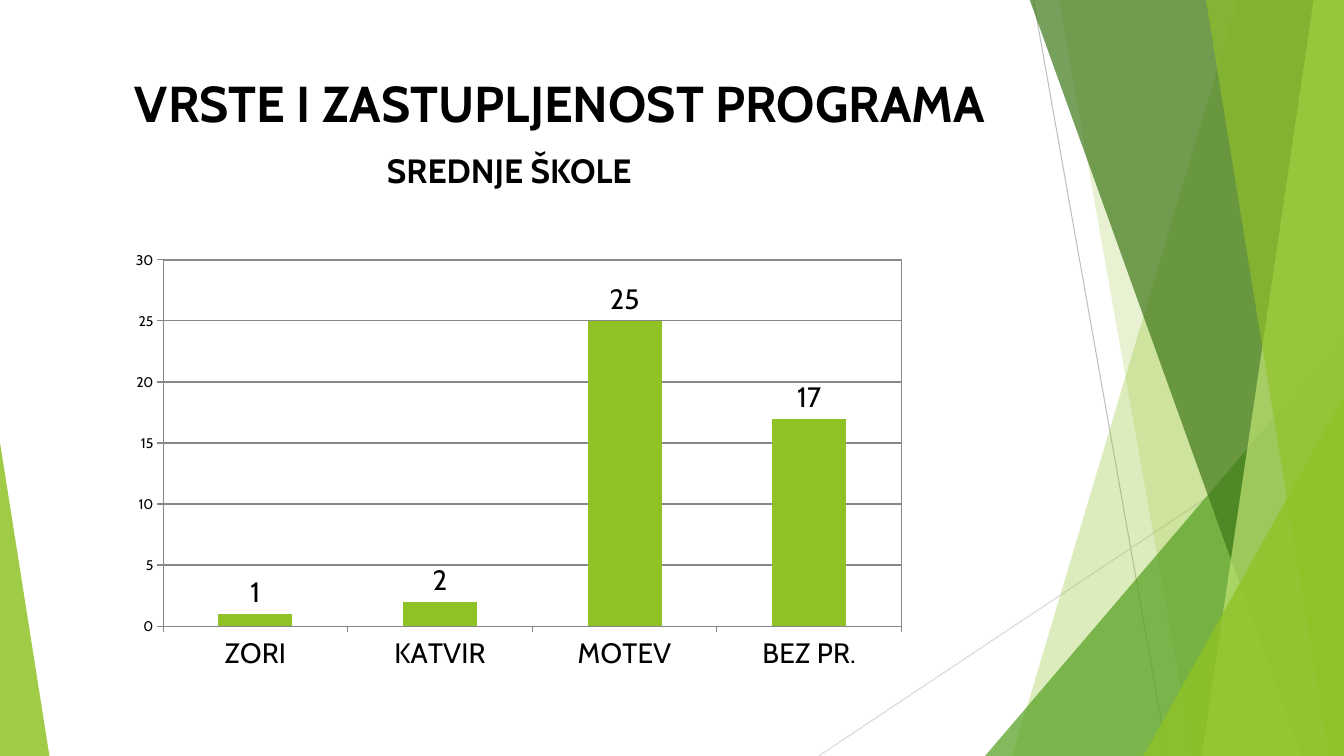
import pptx
import pptx.util
import pptx.dml.color
import pptx.chart.data
import pptx.enum.chart
import pptx.enum.shapes
import pptx.enum.text
import pptx.oxml
import pptx.oxml.ns

FONT = "Cabin"
GREEN = "90C226"
AXIS_GRAY = "878787"
WIDTH, HEIGHT, TOP = 13.33, 7.5, -0.01

HEADING = [
    ("VRSTE I ZASTUPLJENOST PROGRAMA", 36, 0.5, 0),
    ("SREDNJE ŠKOLE", 24, 3.0, 12),
]
PROGRAMS = {"ZORI": 1, "KATVIR": 2, "MOTEV": 25, "BEZ PR.": 17}

THIN_LINES = [
    (10.25, 0, 11.58, HEIGHT, "BFBFBF"),
    (WIDTH, 4.03, 8.12, HEIGHT, "D9D9D9"),
]
FACETS = [
    ("band", (12.28, 10.04), GREEN, 30),
    ("band", (10.5, 11.83), GREEN, 20),
    ("triangle", (9.77, 3.33, 3.56, 1), "54A021", 72),
    ("band", (10.21, 12.91), "3F7819", 70),
    ("band", (13.03, 11.92), "C0E474", 70),
    ("band", (11.96, 13.18), GREEN, 65),
    ("triangle", (11.34, 3.93, 1.99, 1), GREEN, 80),
    ("triangle", (0, 4.39, 0.49, 0), GREEN, 85),
]

Inches = pptx.util.Inches
Pt = pptx.util.Pt


def rgb(value):
    return pptx.dml.color.RGBColor.from_string(value)


def set_font(font, size, bold=False):
    font.name = FONT
    font.size = Pt(size)
    font.bold = bold
    font.color.rgb = rgb("000000")


def set_line(line, color, width):
    line.color.rgb = rgb(color)
    line.width = Pt(width)


def add_thin_line(slide, x1, y1, x2, y2, color):
    line = slide.shapes.add_connector(
        pptx.enum.shapes.MSO_CONNECTOR.STRAIGHT,
        Inches(x1), Inches(y1), Inches(x2), Inches(y2))
    set_line(line.line, color, 0.75)
    props = line._element.spPr
    props.append(pptx.oxml.parse_xml(
        "<a:effectLst %s/>" % pptx.oxml.ns.nsdecls("a")))


def add_facet(slide, kind, geometry, color, opacity):
    if kind == "band":
        top_x, bottom_x = geometry
        corners = [(top_x, TOP), (WIDTH, TOP), (WIDTH, HEIGHT), (bottom_x, HEIGHT)]
        points = [(Inches(x), Inches(y)) for x, y in corners]
        builder = slide.shapes.build_freeform(*points[0], scale=1.0)
        builder.add_line_segments(points[1:], close=True)
        sp = builder.convert_to_shape()
    else:
        left, top, width, apex = geometry
        sp = slide.shapes.add_shape(
            pptx.enum.shapes.MSO_SHAPE.ISOSCELES_TRIANGLE,
            Inches(left), Inches(top), Inches(width), Inches(HEIGHT - top))
        sp.adjustments[0] = apex
    sp.shadow.inherit = False
    sp.line.fill.background()
    sp.fill.solid()
    sp.fill.fore_color.rgb = rgb(color)
    clr = sp._element.spPr.find(".//" + pptx.oxml.ns.qn("a:srgbClr"))
    clr.append(pptx.oxml.parse_xml(
        '<a:alpha %s val="%d"/>' % (pptx.oxml.ns.nsdecls("a"), opacity * 1000)))


def add_heading(slide):
    box = slide.shapes.add_textbox(Inches(0.74), Inches(0.67), Inches(9.4), Inches(1.44))
    tf = box.text_frame
    tf.word_wrap = True
    tf.text = "\n".join(row[0] for row in HEADING)
    for p, (_, size, indent, before) in zip(tf.paragraphs, HEADING):
        p.alignment = pptx.enum.text.PP_ALIGN.LEFT
        p.space_before = Pt(before)
        p._p.get_or_add_pPr().set("marL", str(Inches(indent)))
        set_font(p.runs[0].font, size, True)


def add_program_chart(slide):
    data = pptx.chart.data.CategoryChartData()
    data.categories = list(PROGRAMS)
    data.add_series("Series 1", list(PROGRAMS.values()))
    chart = slide.shapes.add_chart(
        pptx.enum.chart.XL_CHART_TYPE.COLUMN_CLUSTERED,
        Inches(1.19), Inches(2.41), Inches(7.91), Inches(4.33), data).chart
    chart.has_legend = False
    chart.has_title = False
    set_font(chart.font, 10)

    for axis, size in ((chart.category_axis, 20), (chart.value_axis, 10)):
        axis.major_tick_mark = pptx.enum.chart.XL_TICK_MARK.OUTSIDE
        set_font(axis.tick_labels.font, size)
        set_line(axis.format.line, AXIS_GRAY, 0.75)
    axis = chart.value_axis
    axis.minimum_scale, axis.maximum_scale, axis.major_unit = 0, 30, 5
    axis.has_major_gridlines = True
    set_line(axis.major_gridlines.format.line, AXIS_GRAY, 0.75)

    plot = chart.plots[0]
    plot.gap_width = 150
    plot.vary_by_categories = False
    fill = plot.series[0].format.fill
    fill.solid()
    fill.fore_color.rgb = rgb(GREEN)
    plot.has_data_labels = True
    labels = plot.data_labels
    labels.show_value = True
    labels.position = pptx.enum.chart.XL_LABEL_POSITION.OUTSIDE_END
    set_font(labels.font, 20)

    plot_area = chart._chartSpace.chart.plotArea
    plot_area.append(pptx.oxml.parse_xml(
        '<c:spPr %s><a:noFill/><a:ln w="9525"><a:solidFill><a:srgbClr val="%s"/>'
        "</a:solidFill></a:ln></c:spPr>" % (pptx.oxml.ns.nsdecls("c", "a"), AXIS_GRAY)))


def main():
    prs = pptx.Presentation()
    prs.slide_width, prs.slide_height = Inches(WIDTH), Inches(HEIGHT)
    slide = prs.slides.add_slide(prs.slide_layouts[6])
    for line in THIN_LINES:
        add_thin_line(slide, *line)
    for facet in FACETS:
        add_facet(slide, *facet)
    add_heading(slide)
    add_program_chart(slide)
    prs.save("out.pptx")


if __name__ == "__main__":
    main()
